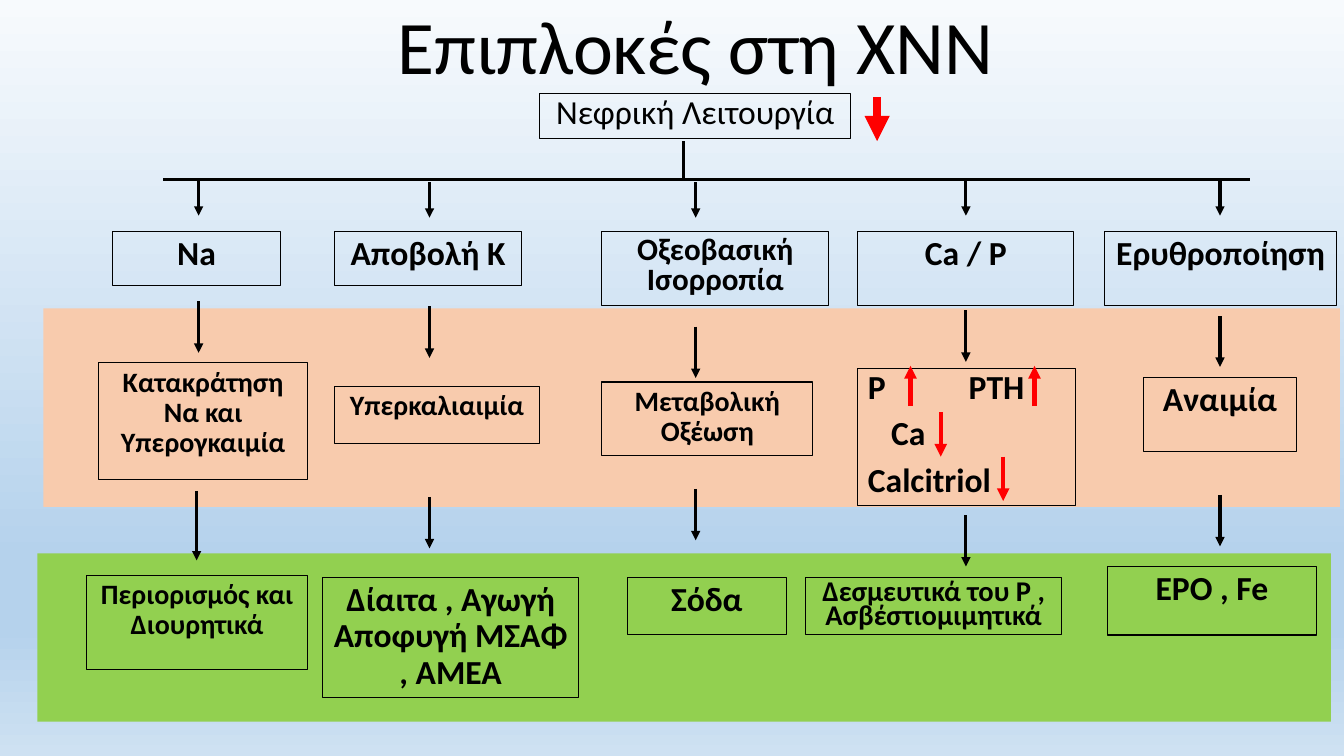
import pptx
import pptx.dml.color
import pptx.enum.shapes
import pptx.enum.text
import pptx.oxml
import pptx.oxml.ns
import pptx.util
from lxml import etree

Inches = pptx.util.Inches
Pt = pptx.util.Pt
qn = pptx.oxml.ns.qn
ALIGN = pptx.enum.text.PP_ALIGN
ANCHOR = pptx.enum.text.MSO_ANCHOR


def rgb(value):
    return pptx.dml.color.RGBColor.from_string(value)


class Deck:
    """Draws the elements of a flow slide in one style."""

    font = "Calibri"
    ink = "000000"
    red = "FF0000"

    def __init__(self):
        self.prs = pptx.Presentation()
        self.prs.slide_width = Inches(13.33)
        self.prs.slide_height = Inches(7.5)
        self.s = self.prs.slides.add_slide(self.prs.slide_layouts[6])

    def background(self, stops):
        fill = self.s.background.fill
        fill.gradient()
        fill.gradient_angle = 270
        gs_list = next(self.s.element.iter(qn("a:gsLst")))
        for gs in list(gs_list):
            gs_list.remove(gs)
        for percent, color in stops:
            gs = etree.SubElement(gs_list, qn("a:gs"), pos=str(percent * 1000))
            etree.SubElement(gs, qn("a:srgbClr"), val=color)

    def rect(self, x, y, w, h):
        sp = self.s.shapes.add_shape(
            pptx.enum.shapes.MSO_SHAPE.RECTANGLE,
            Inches(x), Inches(y), Inches(w), Inches(h))
        sp.shadow.inherit = False
        return sp

    def band(self, x, y, w, h, color):
        sp = self.rect(x, y, w, h)
        sp.fill.solid()
        sp.fill.fore_color.rgb = rgb(color)
        sp.line.fill.background()

    def put_text(self, tf, lines, size, bold, spacing, align, before=10):
        tf.word_wrap = True
        for i, line in enumerate(lines):
            p = tf.add_paragraph() if i else tf.paragraphs[0]
            p.text = line
            p.alignment = align
            p.line_spacing = spacing
            p.space_before = Pt(before)
            p.font.name = self.font
            p.font.size = Pt(size)
            p.font.bold = bold
            p.font.color.rgb = rgb(self.ink)

    def title(self, x, y, w, h, text):
        tf = self.s.shapes.add_textbox(
            Inches(x), Inches(y), Inches(w), Inches(h)).text_frame
        tf.vertical_anchor = ANCHOR.BOTTOM
        self.put_text(tf, [text], 54, False, 0.9, ALIGN.CENTER, before=0)

    def box(self, x, y, w, h, *lines, size=24, bold=True, spacing=0.9,
            align=ALIGN.CENTER):
        sp = self.rect(x, y, w, h)
        sp.fill.background()
        sp.line.color.rgb = rgb(self.ink)
        sp.line.width = Pt(0.75)
        sp.text_frame.vertical_anchor = ANCHOR.TOP
        self.put_text(sp.text_frame, lines, size, bold, spacing, align)
        return sp.text_frame

    def tab(self, p, position):
        tabs = etree.Element(qn("a:tabLst"))
        etree.SubElement(tabs, qn("a:tab"), pos=str(Inches(position)), algn="l")
        p._p.pPr.find(qn("a:defRPr")).addprevious(tabs)

    def indent(self, p, width):
        p._p.pPr.set("marL", str(Inches(width)))

    def line(self, x1, y1, x2, y2, color=ink, width=2.25):
        cxn = self.s.shapes.add_connector(
            pptx.enum.shapes.MSO_CONNECTOR.STRAIGHT,
            Inches(x1), Inches(y1), Inches(x2), Inches(y2))
        cxn.line.color.rgb = rgb(color)
        cxn.line.width = Pt(width)
        etree.SubElement(cxn._element.spPr, qn("a:effectLst"))
        return cxn

    def arrow(self, x, y1, y2, color=ink, width=2.25):
        cxn = self.line(x, y1, x, y2, color, width)
        ln = cxn._element.spPr.find(qn("a:ln"))
        etree.SubElement(ln, qn("a:tailEnd"), type="triangle")


def main():
    d = Deck()
    d.background([(0, "F7FAFD"), (74, "B5D2EC"), (83, "B5D2EC"), (100, "CEE1F2")])
    d.band(0.37, 5.49, 12.83, 1.67, "92D050")
    d.band(0.43, 3.06, 12.86, 1.97, "F8CBAD")
    d.title(1.62, 0.17, 10.56, 0.78, "Επιπλοκές στη ΧΝΝ")
    d.box(5.35, 0.93, 3.09, 0.44, "Νεφρική Λειτουργία", bold=False, spacing=0.8)

    functions_y = 2.3
    for x, w, h, text in [
        (1.12, 1.66, 0.53, "Na"),
        (3.32, 1.85, 0.53, "Αποβολή K"),
        (8.51, 2.14, 0.73, "Ca / P"),
        (10.95, 2.31, 0.73, "Ερυθροποίηση"),
    ]:
        d.box(x, functions_y, w, h, text)
    d.box(5.97, functions_y, 2.25, 0.73, "Οξεοβασική Ισορροπία",
          size=22.2, spacing=0.8)

    for x, y, w, h, text, size in [
        (0.98, 3.6, 2.07, 1.16, "Κατακράτηση Να και Υπερογκαιμία", 20),
        (3.32, 3.83, 2.03, 0.57, "Υπερκαλιαιμία", 20),
        (5.97, 3.79, 2.09, 0.73, "Μεταβολική Οξέωση", 20),
        (11.34, 3.75, 1.52, 0.73, "Αναιμία", 24),
        (0.86, 5.71, 2.19, 0.93, "Περιορισμός και Διουρητικά", 20),
        (3.2, 5.73, 2.54, 1.19, "Δίαιτα , Αγωγή Αποφυγή ΜΣΑΦ , ΑΜΕΑ", 24),
        (6.22, 5.73, 1.58, 0.57, "Σόδα", 24),
        (10.98, 5.62, 2.08, 0.68, "EPO , Fe", 24),
    ]:
        d.box(x, y, w, h, text, size=size)
    d.box(7.99, 5.73, 2.54, 0.57, "Δεσμευτικά του P , Ασβέστιομιμητικά",
          size=20.4, spacing=0.7)

    minerals = d.box(8.51, 3.66, 2.16, 1.36, "P\tPTH", "Ca", "Calcitriol",
                     spacing=0.8, align=ALIGN.LEFT)
    d.tab(minerals.paragraphs[0], 1)
    d.indent(minerals.paragraphs[1], 0.23)

    d.line(6.78, 1.4, 6.78, 1.78)
    d.line(1.62, 1.78, 12.4, 1.78)
    for x, *spans in [
        (1.97, (1.78, 2.14), (2.99, 3.5)),
        (1.95, (4.87, 5.56)),
        (4.26, (1.81, 2.16), (3.04, 3.55), (4.93, 5.44)),
        (6.9, (1.81, 2.16), (3.24, 3.75), (4.85, 5.36)),
        (9.58, (1.78, 2.14), (3.08, 3.59), (5.11, 5.62)),
        (12.1, (1.78, 2.14), (3.14, 3.64), (4.91, 5.42)),
    ]:
        for y1, y2 in spans:
            d.arrow(x, y1, y2)

    d.arrow(8.7, 0.96, 1.4, d.red, 6)
    for x, y1, y2 in [(9.33, 4.09, 4.53), (9.95, 4.53, 4.97),
                      (9.03, 4.03, 3.63), (10.26, 4.03, 3.63)]:
        d.arrow(x, y1, y2, d.red, 3)

    d.prs.save("out.pptx")


if __name__ == "__main__":
    main()
